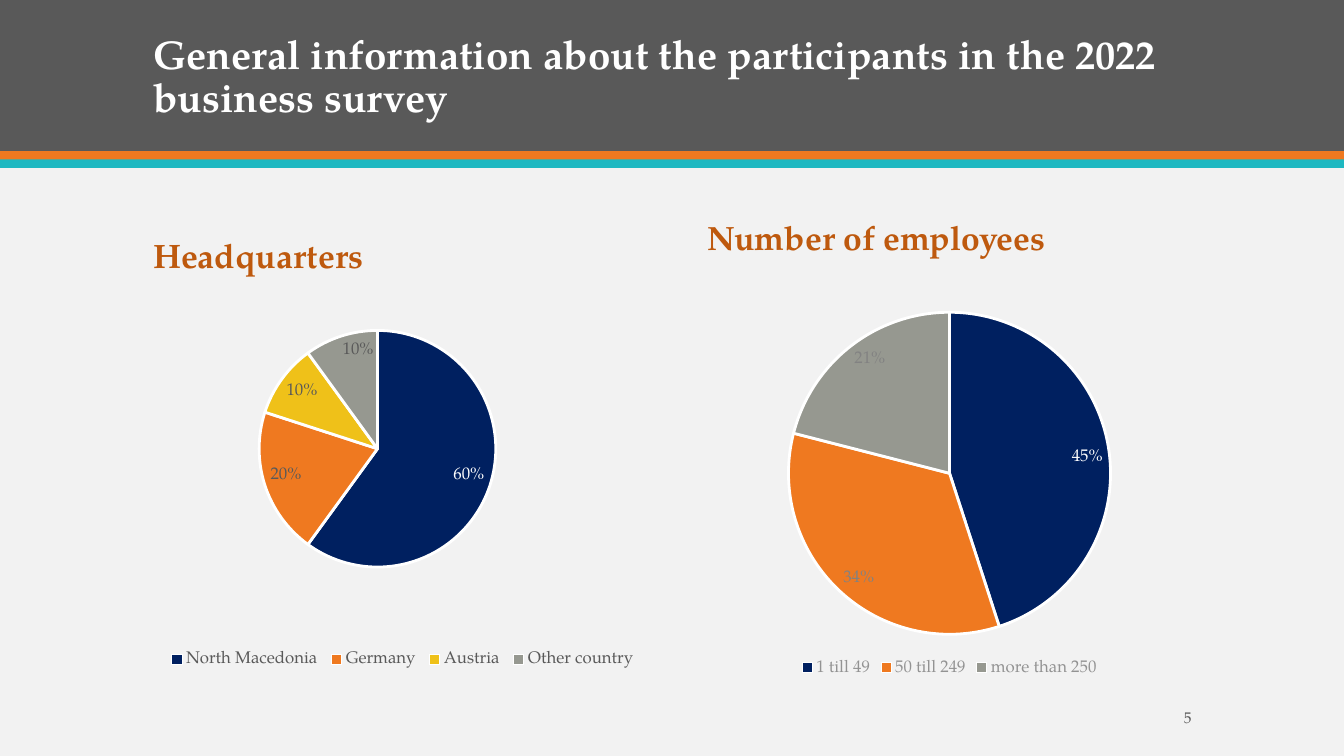
from dataclasses import dataclass

from lxml.etree import Element, SubElement
from pptx import Presentation
from pptx.chart.data import CategoryChartData as Data
from pptx.dml.color import RGBColor
from pptx.enum.chart import XL_CHART_TYPE as Kind
from pptx.enum.chart import XL_LABEL_POSITION as Spot
from pptx.enum.chart import XL_LEGEND_POSITION as Side
from pptx.enum.shapes import MSO_SHAPE as Form
from pptx.enum.text import MSO_ANCHOR as Anchor
from pptx.enum.text import PP_ALIGN as Align
from pptx.oxml.ns import qn
from pptx.slide import Slide
from pptx.util import Pt

FONT = "TeX Gyre Pagella"
WHITE = RGBColor(0xFF, 0xFF, 0xFF)
PALE = RGBColor(0xF2, 0xF2, 0xF2)
DARK = RGBColor(0x59, 0x59, 0x59)
GRAY = RGBColor(0x96, 0x98, 0x90)
MID = RGBColor(0x82, 0x82, 0x82)
LIGHT = RGBColor(0x93, 0x93, 0x93)
NAVY = RGBColor(0x00, 0x20, 0x60)
ORANGE = RGBColor(0xEF, 0x79, 0x20)
RUST = RGBColor(0xBE, 0x59, 0x0E)
GOLD = RGBColor(0xEF, 0xC1, 0x19)
TEAL = RGBColor(0x1E, 0xB8, 0xC1)

WIDTH, HEIGHT = 960, 540
LEFT, RIGHT = 102.24, 498.24
HALF = 360
PIE_TOP = 213.12

Frame = tuple[float, float, float, float]


@dataclass
class Band:
    top: float
    height: float
    color: RGBColor


@dataclass
class Label:
    text: str
    box: Frame
    size: float
    color: RGBColor
    bold: bool = True
    anchor: Anchor = Anchor.MIDDLE
    align: Align = Align.LEFT
    pad_top: float = 3.6
    pad_end: float = 3.6
    pitch: float | None = None


@dataclass
class Slice:
    name: str
    value: int
    color: RGBColor


@dataclass
class Pie:
    box: Frame
    cuts: list[Slice]
    label: RGBColor
    key: RGBColor
    plot: Frame | None = None
    legend: Frame | None = None


BANDS = [
    Band(0, 108, DARK),
    Band(108, 6.2, ORANGE),
    Band(113.8, 6.2, TEAL),
]

LABELS = [
    Label("General information about the participants in the 2022 business survey",
          (LEFT, 16, 781.92, 70), 28.8, WHITE,
          anchor=Anchor.BOTTOM, pad_top=0, pad_end=0, pitch=30.7),
    Label("Headquarters", (LEFT, 144, HALF, 66.96), 24.1, RUST, pad_top=13),
    Label("Number of employees", (RIGHT, 128.88, HALF, 81.36), 24, RUST),
    Label("5", (750.24, 501.84, 108, 21.6), 11, DARK,
          bold=False, align=Align.RIGHT),
]

PIES = [
    Pie((LEFT, PIE_TOP, HALF, 286.56),
        [Slice("North Macedonia", 60, NAVY), Slice("Germany", 20, ORANGE),
         Slice("Austria", 10, GOLD), Slice("Other country", 10, GRAY)],
        DARK, DARK,
        plot=(0.04, 0.08, 0.85, 0.59), legend=(0.04, 0.86, 0.95, 0.08)),
    Pie((RIGHT, PIE_TOP, HALF, 272.88),
        [Slice("1 till 49", 45, NAVY), Slice("50 till 249", 34, ORANGE),
         Slice("more than 250", 21, GRAY)],
        MID, LIGHT),
]


def points(box: Frame) -> list[Pt]:
    return [Pt(side) for side in box]


def style(font, size: float, color: RGBColor) -> None:
    font.name = FONT
    font.size = Pt(size)
    font.color.rgb = color


def draw_band(slide: Slide, band: Band) -> None:
    box = points((0, band.top, WIDTH, band.height))
    shape = slide.shapes.add_shape(Form.RECTANGLE, *box)
    shape.shadow.inherit = False
    shape.fill.solid()
    shape.fill.fore_color.rgb = band.color
    shape.line.fill.background()


def draw_label(slide: Slide, label: Label) -> None:
    frame = slide.shapes.add_textbox(*points(label.box)).text_frame
    frame.word_wrap = True
    frame.vertical_anchor = label.anchor
    frame.margin_top = Pt(label.pad_top)
    frame.margin_bottom = Pt(label.pad_end)
    line = frame.paragraphs[0]
    line.alignment = label.align
    if label.pitch:
        line.line_spacing = Pt(label.pitch)
    run = line.add_run()
    run.text = label.text
    run.font.bold = label.bold
    style(run.font, label.size, label.color)


def place(owner, index: int, box: Frame, inner: bool) -> None:
    for old in owner.findall(qn("c:layout")):
        owner.remove(old)
    layout = Element(qn("c:layout"))
    manual = SubElement(layout, qn("c:manualLayout"))
    rules = [("layoutTarget", "inner")] if inner else []
    rules += [("xMode", "edge"), ("yMode", "edge")]
    rules += [(key, str(size)) for key, size in zip("xywh", box)]
    for key, value in rules:
        SubElement(manual, qn(f"c:{key}")).set("val", value)
    owner.insert(index, layout)


def draw_pie(slide: Slide, pie: Pie) -> None:
    data = Data(number_format='0"%"')
    data.categories = [cut.name for cut in pie.cuts]
    data.add_series("Series 1", [cut.value for cut in pie.cuts])
    chart = slide.shapes.add_chart(Kind.PIE, *points(pie.box), data).chart
    chart.has_title = False
    style(chart.font, 12, DARK)

    chart.has_legend = True
    legend = chart.legend
    legend.position = Side.BOTTOM
    legend.include_in_layout = False
    style(legend.font, 12, pie.key)

    plot = chart.plots[0]
    plot.vary_by_categories = True
    series = plot.series[0]
    labels = series.data_labels
    labels.show_value = True
    labels.show_percentage = False
    labels.number_format = '0"%"'
    labels.number_format_is_linked = False
    labels.position = Spot.INSIDE_END
    style(labels.font, 12, pie.label)

    for index, cut in enumerate(pie.cuts):
        form = series.points[index].format
        form.fill.solid()
        form.fill.fore_color.rgb = cut.color
        form.line.color.rgb = WHITE
        form.line.width = Pt(2)
    first = series.points[0].data_label
    style(first.font, 12, WHITE)
    first.position = Spot.INSIDE_END

    root = chart.plots[0]._element.getparent().getparent()
    if pie.plot:
        place(root.find(qn("c:plotArea")), 0, pie.plot, True)
    if pie.legend:
        place(root.find(qn("c:legend")), 1, pie.legend, False)


def main() -> None:
    deck = Presentation()
    deck.slide_width, deck.slide_height = Pt(WIDTH), Pt(HEIGHT)
    slide = deck.slides.add_slide(deck.slide_layouts[6])
    slide.background.fill.solid()
    slide.background.fill.fore_color.rgb = PALE
    for band in BANDS:
        draw_band(slide, band)
    for label in LABELS:
        draw_label(slide, label)
    for pie in PIES:
        draw_pie(slide, pie)
    deck.save("out.pptx")


if __name__ == "__main__":
    main()
